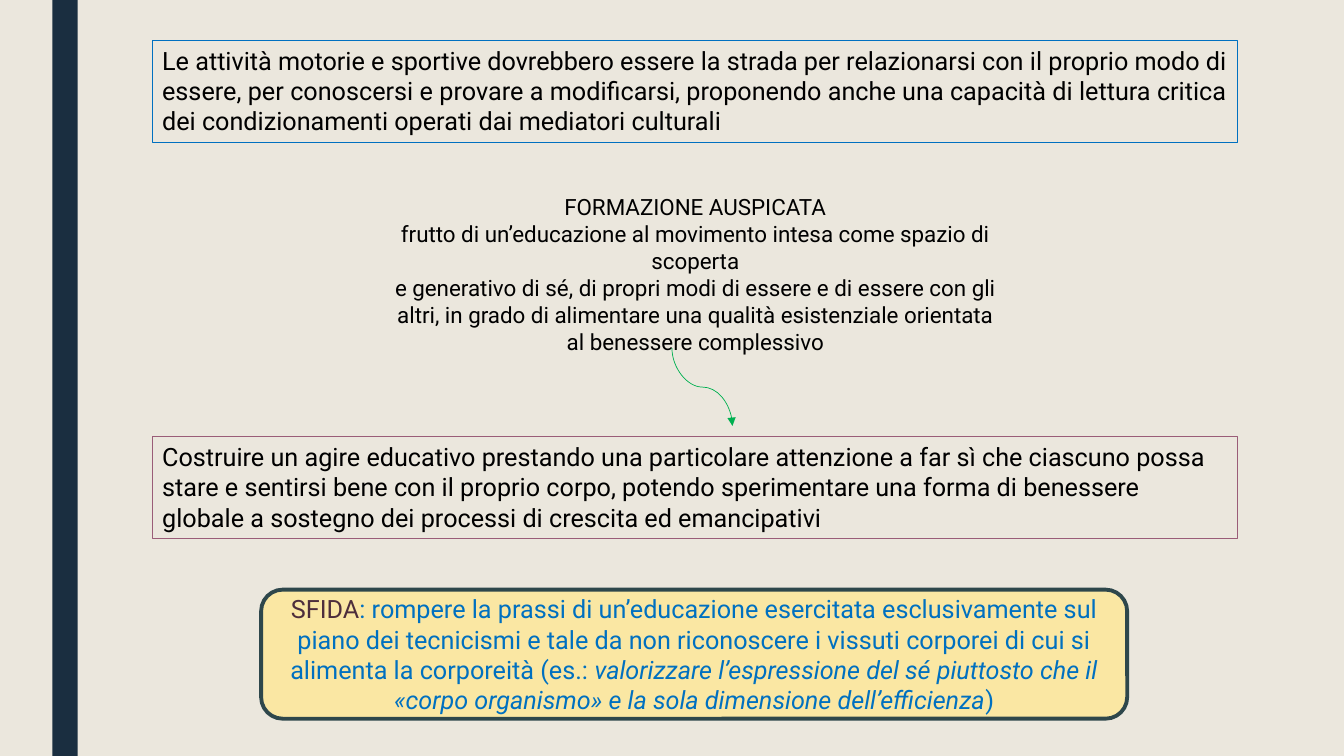
from pptx import Presentation
from pptx.dml.color import RGBColor
from pptx.enum.shapes import MSO_CONNECTOR, MSO_SHAPE
from pptx.enum.text import MSO_ANCHOR, MSO_AUTO_SIZE, PP_ALIGN
from pptx.oxml.ns import qn
from pptx.util import Inches, Pt
from lxml.etree import SubElement

WIDTH, HEIGHT = Inches(13.33), Inches(7.5)
FONT = "Roboto"
COLORS = {
    "background": "EBE7DD", "bar": "1A2E40", "text": "000000",
    "premise": "0070C0", "purpose": "9A5D78", "arrow": "00B050",
    "challenge": "FAE7A3", "challenge_line": "2E474B",
    "challenge_label": "4D2E3C", "challenge_text": "0070C0",
}
PREMISE = (
    "Le attività motorie e sportive dovrebbero essere la strada per relazionarsi "
    "con il proprio modo di essere, per conoscersi e provare a modificarsi, "
    "proponendo anche una capacità di lettura critica dei condizionamenti operati "
    "dai mediatori culturali"
)
FORMATION = [
    "FORMAZIONE AUSPICATA",
    "frutto di un’educazione al movimento intesa come spazio di scoperta",
    "e generativo di sé, di propri modi di essere e di essere con gli",
    "altri, in grado di alimentare una qualità esistenziale orientata",
    "al benessere complessivo",
]
PURPOSE = (
    "Costruire un agire educativo prestando una particolare attenzione a far sì che "
    "ciascuno possa stare e sentirsi bene con il proprio corpo, potendo sperimentare "
    "una forma di benessere globale a sostegno dei processi di crescita ed emancipativi"
)
CHALLENGE = [
    ("SFIDA", "challenge_label", False),
    (": rompere la prassi di un’educazione esercitata esclusivamente sul piano dei "
     "tecnicismi e tale da non riconoscere i vissuti corporei di cui si alimenta la "
     "corporeità (es.: ", "challenge_text", False),
    ("valorizzare l’espressione del sé piuttosto che il «corpo organismo» e la sola "
     "dimensione dell’efficienza", "challenge_text", True),
    (")", "challenge_text", False),
]


def color(name):
    """Return the named colour."""
    return RGBColor.from_string(COLORS[name])


def across(percent):
    """Turn a percentage of the slide width into a length."""
    return round(WIDTH * percent / 100)


def down(percent):
    """Turn a percentage of the slide height into a length."""
    return round(HEIGHT * percent / 100)


def place(left, top, width, height):
    """Turn percentages of the slide into a position and size."""
    return across(left), down(top), across(width), down(height)


def plain(text):
    """Return a paragraph made of one black, upright run."""
    return [(text, "text", False)]


def add_panel(page, kind, area, fill=None, line=None, weight=0.75):
    """Add a flat shape with an optional fill and outline."""
    panel = page.shapes.add_shape(kind, *place(*area))
    panel.shadow.inherit = False
    if fill:
        panel.fill.solid()
        panel.fill.fore_color.rgb = color(fill)
    else:
        panel.fill.background()
    if line:
        panel.line.color.rgb = color(line)
        panel.line.width = Pt(weight)
    else:
        panel.line.fill.background()
    return panel


def write(box, paragraphs, size, align, anchor=MSO_ANCHOR.TOP, grow=True):
    """Write paragraphs of (text, colour, italic) runs into a box."""
    frame = box.text_frame
    frame.word_wrap = True
    frame.vertical_anchor = anchor
    frame.auto_size = MSO_AUTO_SIZE.SHAPE_TO_FIT_TEXT if grow else MSO_AUTO_SIZE.NONE
    for index, runs in enumerate(paragraphs):
        para = frame.add_paragraph() if index else frame.paragraphs[0]
        para.alignment = align
        for text, shade, italic in runs:
            span = para.add_run()
            span.text = text
            span.font.name = FONT
            span.font.size = Pt(size)
            span.font.italic = italic
            span.font.color.rgb = color(shade)


def add_curved_arrow(page, begin, end):
    """Add a curved arrow turned a quarter so that it leaves and arrives vertically."""
    arrow = page.shapes.add_connector(
        MSO_CONNECTOR.CURVE, across(begin[0]), down(begin[1]), across(end[0]), down(end[1]))
    arrow.line.color.rgb = color("arrow")
    arrow.line.width = Pt(0.5)
    properties = arrow._element.spPr
    properties.find(qn("a:xfrm")).set("rot", str(270 * 60000))
    SubElement(properties.find(qn("a:ln")), qn("a:tailEnd"), type="triangle")
    SubElement(properties, qn("a:effectLst"))


def main():
    """Build the slide and save the deck."""
    deck = Presentation()
    deck.slide_width, deck.slide_height = WIDTH, HEIGHT
    page = deck.slides.add_slide(deck.slide_layouts[6])
    page.background.fill.solid()
    page.background.fill.fore_color.rgb = color("background")

    add_panel(page, MSO_SHAPE.RECTANGLE, (3.9, 0, 1.88, 100), fill="bar")
    premise = add_panel(page, MSO_SHAPE.RECTANGLE, (11.33, 5.33, 80.72, 13.47), line="premise")
    write(premise, [plain(PREMISE)], 18, PP_ALIGN.JUSTIFY)

    formation = page.shapes.add_textbox(*place(26.71, 24.93, 50.04, 19.73))
    write(formation, [plain(text) for text in FORMATION], 16, PP_ALIGN.CENTER)

    purpose = add_panel(page, MSO_SHAPE.RECTANGLE, (11.33, 57.73, 80.72, 13.47), line="purpose")
    write(purpose, [plain(PURPOSE)], 18, PP_ALIGN.LEFT)

    add_curved_arrow(page, (55.14, 47.2), (49.36, 55.2))

    challenge = add_panel(page, MSO_SHAPE.ROUNDED_RECTANGLE, (19.43, 78, 64.44, 17.07),
                          fill="challenge", line="challenge_line", weight=2.75)
    write(challenge, [CHALLENGE], 18, PP_ALIGN.CENTER, MSO_ANCHOR.MIDDLE, grow=False)

    deck.save("out.pptx")


if __name__ == "__main__":
    main()
